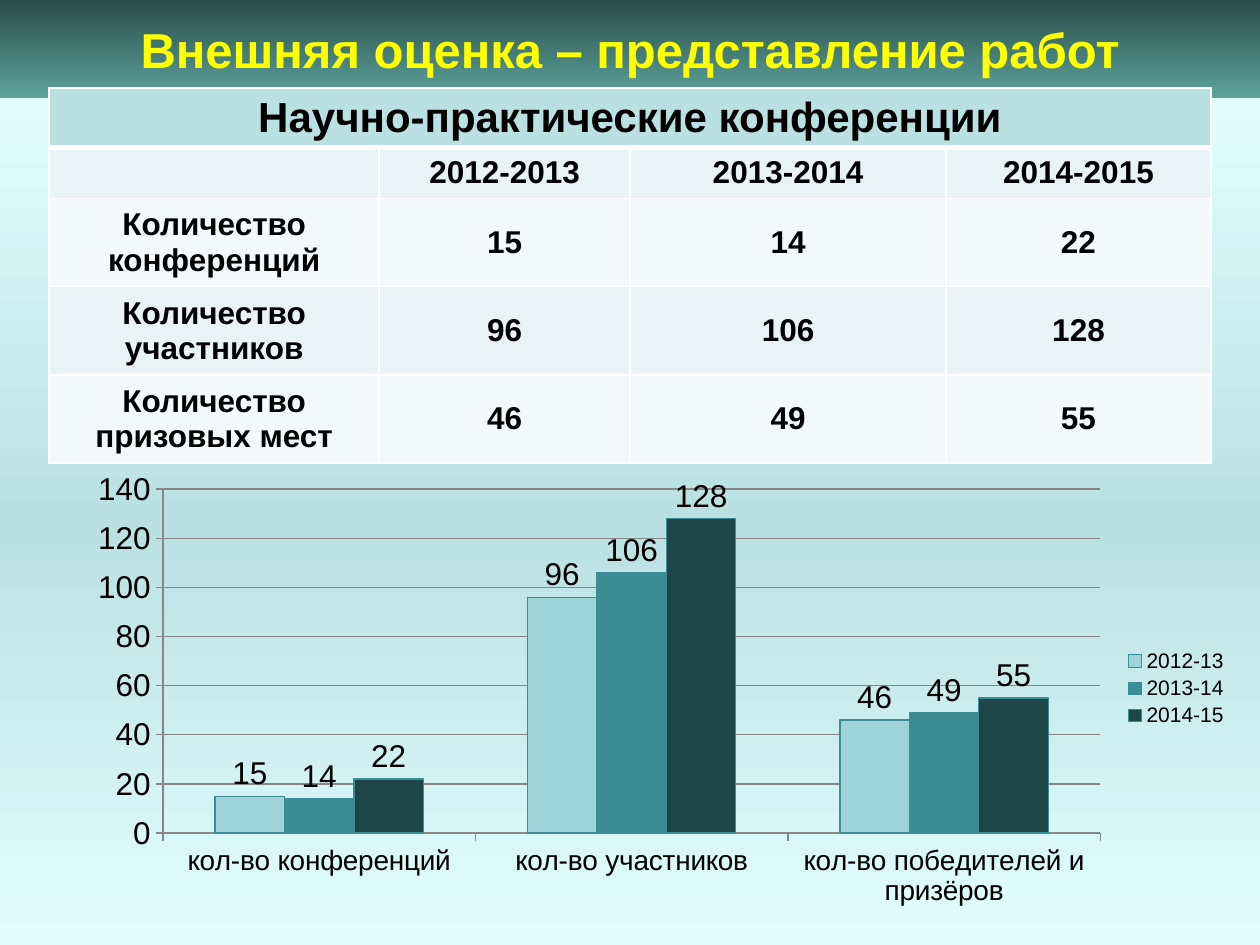
from copy import deepcopy

from lxml import etree
from pptx import Presentation, util as u
from pptx.chart.data import CategoryChartData
from pptx.dml.color import RGBColor
from pptx.enum import chart as charts, shapes, text
from pptx.oxml.ns import qn

WIDTH, HEIGHT = u.Inches(10), u.Inches(7.5)
BAND = 0.104
BLACK = RGBColor(0, 0, 0)
WHITE = RGBColor(255, 255, 255)
YELLOW = RGBColor(255, 255, 0)
GREY = RGBColor(0x86, 0x86, 0x86)
ICE = RGBColor(0xE1, 0xFD, 0xFF)
AQUA = RGBColor(0xBB, 0xE0, 0xE3)
DEEP = RGBColor(0x2A, 0x4C, 0x49)
SEA = RGBColor(0x5C, 0xA4, 0x9D)
TEAL = RGBColor(0x3C, 0x8C, 0x93)
STRIPES = [RGBColor(0xF3, 0xF9, 0xFA), RGBColor(0xE7, 0xF3, 0xF4)]
BAR_COLOURS = [RGBColor(0x9E, 0xD3, 0xD7), TEAL, RGBColor(0x1E, 0x46, 0x49)]

TITLE = "Внешняя оценка – представление работ"
TABLE_TITLE = "Научно-практические конференции"
YEARS = ["2012-2013", "2013-2014", "2014-2015"]
MEASURES = ["Количество конференций", "Количество участников", "Количество призовых мест"]
CATEGORIES = ["кол-во конференций", "кол-во участников", "кол-во победителей и призёров"]
COUNTS = [(15, 14, 22), (96, 106, 128), (46, 49, 55)]
COLUMNS = [2.62, 1.99, 2.51, 2.1]
ROWS = [0.4, 0.4, 0.7, 0.7, 0.7]


def share(left, top, width, height):
    return [u.Emu(int(part * size)) for part, size in
            zip((left, top, width, height), (WIDTH, HEIGHT, WIDTH, HEIGHT))]


def set_values(target, values):
    for name, value in values.items():
        setattr(target, name, value)


def set_font(font, size, colour=BLACK, **values):
    set_values(font, {"name": "Arial", "size": u.Pt(size), **values})
    font.color.rgb = colour


def fill_gradient(shape, colours):
    fill = shape.fill
    fill.gradient()
    fill.gradient_angle = 270
    stop_list = shape._element.spPr.find(qn("a:gradFill")).find(qn("a:gsLst"))
    while len(stop_list) < len(colours):
        stop_list.append(deepcopy(stop_list[-1]))
    for index, (stop, colour) in enumerate(zip(fill.gradient_stops, colours)):
        stop.color.rgb = colour
        stop.position = index / (len(colours) - 1)
    shape.line.fill.background()


def add_backdrop(page):
    backdrop = page.shapes.add_shape(shapes.MSO_SHAPE.RECTANGLE, *share(0, BAND, 1, 1 - BAND))
    backdrop.shadow.inherit = False
    fill_gradient(backdrop, [ICE, AQUA, ICE])
    page.shapes._spTree.insert(2, backdrop._element)


def write(box, words, size, colour=BLACK):
    para = box.paragraphs[0]
    para.alignment = text.PP_ALIGN.CENTER
    span = para.add_run()
    span.text = words
    set_font(span.font, size, colour, bold=True)


def set_title(page):
    title = page.shapes.title
    set_values(title, dict(zip(("left", "top", "width", "height"), share(0, 0, 1, BAND))))
    fill_gradient(title, [DEEP, SEA])
    set_values(title.text_frame, {"word_wrap": False, "auto_size": text.MSO_AUTO_SIZE.NONE,
                                  "vertical_anchor": text.MSO_ANCHOR.MIDDLE})
    write(title.text_frame, TITLE, 28, YELLOW)


def set_borders(cell, widths):
    properties = cell._tc.get_or_add_tcPr()
    for index, (side, points) in enumerate(widths.items()):
        line = etree.Element(qn(f"a:ln{side}"), w=str(u.Pt(points)))
        solid = etree.SubElement(line, qn("a:solidFill"))
        etree.SubElement(solid, qn("a:srgbClr"), val=str(WHITE))
        properties.insert(index, line)


def add_conference_table(page):
    frame = page.shapes.add_table(len(ROWS), len(COLUMNS), *share(0.039, 0.093, 0.922, 0.4))
    table = frame.table
    for column, width in zip(table.columns, COLUMNS):
        column.width = u.Inches(width)
    for row, height in zip(table.rows, ROWS):
        row.height = u.Inches(height)
    table.cell(0, 0).merge(table.cell(0, len(COLUMNS) - 1))
    body = [["", *YEARS]] + [[name, *map(str, row)] for name, row in zip(MEASURES, COUNTS)]
    content = [[TABLE_TITLE, "", "", ""], *body]
    for r, row in enumerate(content):
        for c, words in enumerate(row):
            cell = table.cell(r, c)
            cell.vertical_anchor = text.MSO_ANCHOR.MIDDLE
            cell.fill.solid()
            cell.fill.fore_color.rgb = STRIPES[r % 2] if r else AQUA
            set_borders(cell, {"L": 1, "R": 1, "T": 3 if r == 1 else 1, "B": 1 if r else 3})
            if words:
                write(cell.text_frame, words, 18 if r else 24)


def set_line(line, colour):
    line.color.rgb = colour
    line.width = u.Pt(0.75)


def place_plot(chart, **parts):
    plot_area = chart._chartSpace.chart.plotArea
    for old in plot_area.findall(qn("c:layout")):
        plot_area.remove(old)
    layout = etree.Element(qn("c:layout"))
    manual = etree.SubElement(layout, qn("c:manualLayout"))
    values = {"layoutTarget": "inner", "xMode": "edge", "yMode": "edge", **parts}
    for name, value in values.items():
        etree.SubElement(manual, qn(f"c:{name}"), val=str(value))
    plot_area.insert(0, layout)


def style_axes(chart):
    for axis, size in ((chart.category_axis, 16), (chart.value_axis, 18)):
        set_font(axis.tick_labels.font, size)
        set_line(axis.format.line, GREY)
    set_values(chart.value_axis, {"minimum_scale": 0, "maximum_scale": 140, "major_unit": 20,
                                  "has_major_gridlines": True})
    set_line(chart.value_axis.major_gridlines.format.line, GREY)


def add_conference_chart(page):
    data = CategoryChartData()
    data.categories = CATEGORIES
    for year, values in zip(YEARS, zip(*COUNTS)):
        data.add_series(year[:5] + year[-2:], values)
    frame = page.shapes.add_chart(charts.XL_CHART_TYPE.COLUMN_CLUSTERED,
                                  *share(0.055, 0.489, 0.93, 0.479), data)
    chart = frame.chart
    set_font(chart.font, 18)
    set_values(chart, {"has_title": False, "has_legend": True})
    set_values(chart.legend, {"position": charts.XL_LEGEND_POSITION.RIGHT,
                              "include_in_layout": False})
    set_font(chart.legend.font, 12)
    style_axes(chart)
    plot = chart.plots[0]
    set_values(plot, {"gap_width": 150, "overlap": 0, "vary_by_categories": False})
    for series, colour in zip(plot.series, BAR_COLOURS):
        series.format.fill.solid()
        series.format.fill.fore_color.rgb = colour
        set_line(series.format.line, TEAL)
        labels = series.data_labels
        set_values(labels, {"show_value": True,
                            "position": charts.XL_LABEL_POSITION.OUTSIDE_END})
        set_font(labels.font, 18)
    place_plot(chart, x=0.08, y=0.06, w=0.8, h=0.76)


def main():
    deck = Presentation()
    set_values(deck, {"slide_width": WIDTH, "slide_height": HEIGHT})
    page = deck.slides.add_slide(deck.slide_layouts[5])
    add_backdrop(page)
    set_title(page)
    add_conference_table(page)
    add_conference_chart(page)
    deck.save("out.pptx")


if __name__ == "__main__":
    main()
